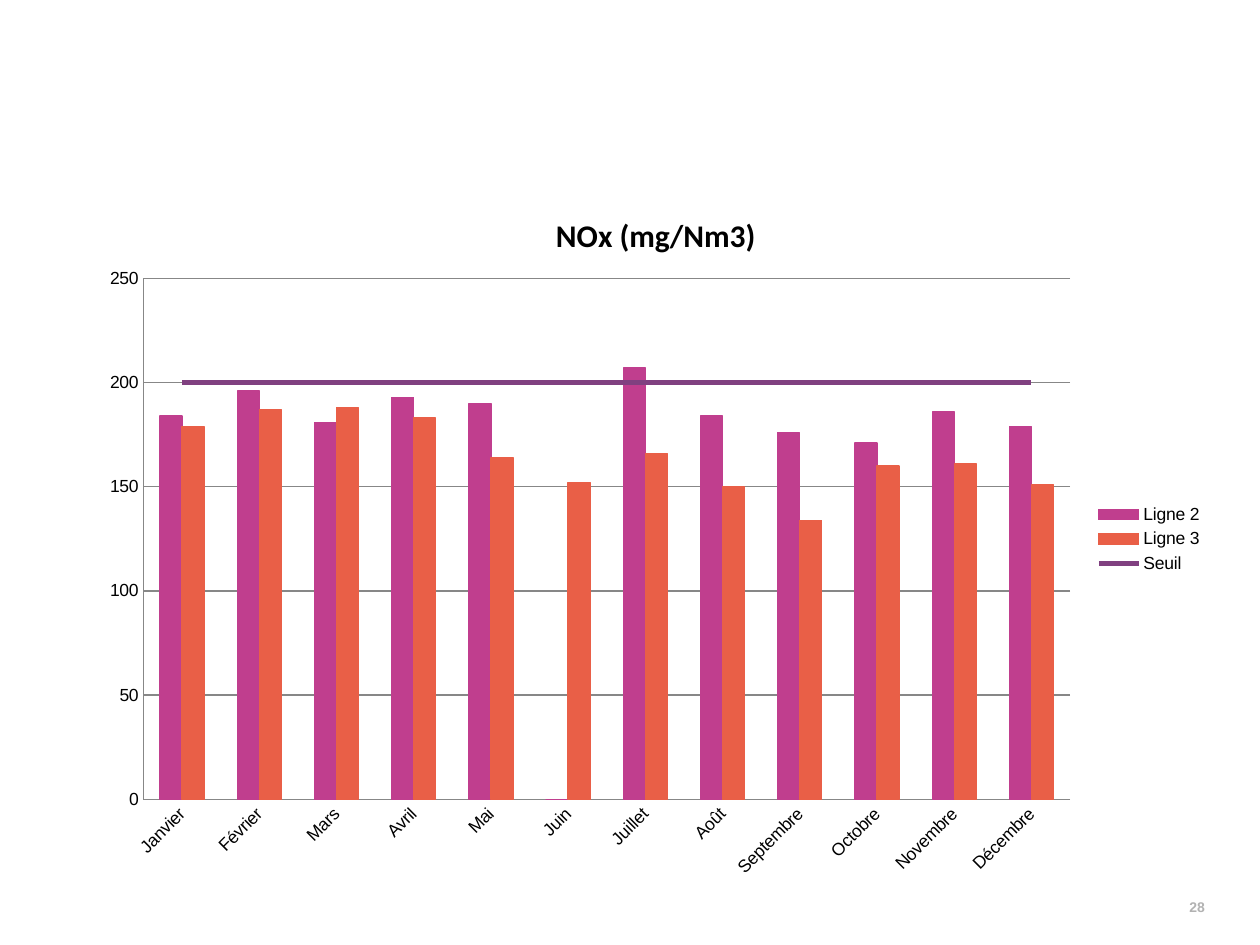
import pptx
import pptx.chart.data
import pptx.dml.color
import pptx.enum.chart
import pptx.enum.text
import pptx.oxml
import pptx.oxml.ns
import pptx.util

Pt = pptx.util.Pt
RGB = pptx.dml.color.RGBColor
Enum = pptx.enum.chart
qn = pptx.oxml.ns.qn

BLACK = RGB(0x00, 0x00, 0x00)
GREY = RGB(0x87, 0x87, 0x87)
PALE = RGB(0xB2, 0xB2, 0xB2)
PINK = RGB(0xC0, 0x3E, 0x8E)
CORAL = RGB(0xE9, 0x5F, 0x47)
PURPLE = RGB(0x80, 0x40, 0x80)

MONTHS = ["Janvier", "Février", "Mars", "Avril", "Mai", "Juin", "Juillet",
          "Août", "Septembre", "Octobre", "Novembre", "Décembre"]
LIMIT = 200
SERIES = {
    "Ligne 2": [184, 196, 181, 193, 190, 0, 207, 184, 176, 171, 186, 179],
    "Ligne 3": [179, 187, 188, 183, 164, 152, 166, 150, 134, 160, 161, 151],
    "Seuil": [LIMIT] * len(MONTHS),
}


def style(item, values):
    for name, value in values.items():
        setattr(item, name, value)


def paint(font, color, **values):
    style(font, values)
    font.color.rgb = color


def stroke(line, color, width):
    line.color.rgb = color
    line.width = Pt(width)


def node(xml):
    space = pptx.oxml.ns.nsdecls("c", "a")
    return pptx.oxml.parse_xml(xml.replace(" NS", " " + space, 1))


def drop(part, tag):
    for old in part.findall(qn(tag)):
        part.remove(old)


def place(part, x, y, w=None, h=None, inner=False):
    """Fix a chart part at fractions of the chart area."""
    drop(part, "c:layout")
    target = '<c:layoutTarget val="inner"/>' if inner else ""
    modes = '<c:xMode val="edge"/><c:yMode val="edge"/>'
    sizes = "".join(f'<c:{key} val="{value}"/>'
                    for key, value in zip("xywh", (x, y, w, h))
                    if value is not None)
    layout = node(f"<c:layout NS><c:manualLayout>{target}{modes}{sizes}"
                  "</c:manualLayout></c:layout>")
    if inner:
        part.insert(0, layout)
    else:
        part.find(qn("c:overlay")).addprevious(layout)


def add_line(chart):
    """Turn the last column series into a line on the same axes."""
    bars = chart.plots[0]._element
    ser = bars.findall(qn("c:ser"))[-1]
    drop(ser, "c:invertIfNegative")
    ids = "".join(f'<c:axId val="{axis.get("val")}"/>'
                  for axis in bars.findall(qn("c:axId")))
    lines = node('<c:lineChart NS><c:grouping val="standard"/>'
                 '<c:varyColors val="0"/><c:marker val="1"/>'
                 f"{ids}</c:lineChart>")
    lines.insert(2, ser)
    bars.addnext(lines)


def set_title(chart):
    frame = chart.chart_title.text_frame
    frame.text = "NOx (mg/Nm3)"
    paint(frame.paragraphs[0].runs[0].font, BLACK,
          name="Calibri", size=Pt(18), bold=True)
    title = chart.chart_title._element
    title.find(qn("c:overlay")).set("val", "1")
    place(title, 0.41, 0.04)


def set_axes(chart):
    for axis in (chart.category_axis, chart.value_axis):
        style(axis, {"major_tick_mark": Enum.XL_TICK_MARK.NONE,
                     "minor_tick_mark": Enum.XL_TICK_MARK.NONE})
        stroke(axis.format.line, GREY, 0.75)
        paint(axis.tick_labels.font, BLACK, name="Arial", size=Pt(10))
    style(chart.value_axis, {"minimum_scale": 0, "maximum_scale": 250,
                             "major_unit": 50, "has_major_gridlines": True})
    stroke(chart.value_axis.major_gridlines.format.line, GREY, 0.75)
    text = chart.category_axis._element.find(qn("c:txPr"))
    text.find(qn("a:bodyPr")).set("rot", str(-45 * 60000))


def set_series(chart):
    bars, lines = chart.plots
    style(bars, {"gap_width": 150, "overlap": 0, "vary_by_categories": False})
    for series, color in zip(bars.series, (PINK, CORAL)):
        series.format.fill.solid()
        series.format.fill.fore_color.rgb = color
        stroke(series.format.line, color, 0.75)
    limit = lines.series[0]
    limit.smooth = True
    limit.marker.style = Enum.XL_MARKER_STYLE.NONE
    stroke(limit.format.line, PURPLE, 3)


def set_legend(chart):
    chart.has_legend = True
    style(chart.legend, {"position": Enum.XL_LEGEND_POSITION.RIGHT,
                         "include_in_layout": False})
    paint(chart.legend.font, BLACK, name="Arial", size=Pt(10))
    place(chart.legend._element, 0.89, 0.45, 0.1, 0.11)


def add_chart(slide):
    data = pptx.chart.data.CategoryChartData()
    data.categories = MONTHS
    for name, values in SERIES.items():
        data.add_series(name, values)
    chart = slide.shapes.add_chart(
        Enum.XL_CHART_TYPE.COLUMN_CLUSTERED,
        Pt(49.7), Pt(102.2), Pt(645.8), Pt(407.5), data).chart
    paint(chart.font, BLACK, name="Arial", size=Pt(10))
    add_line(chart)
    set_title(chart)
    set_axes(chart)
    set_series(chart)
    set_legend(chart)
    area = chart._chartSpace.find(".//" + qn("c:plotArea"))
    place(area, 0.05, 0.14, 0.82, 0.73, inner=True)


def add_number(slide):
    box = slide.shapes.add_textbox(Pt(527.8), Pt(504), Pt(167.8), Pt(28.8))
    frame = box.text_frame
    style(frame, {"word_wrap": True, "text": "28",
                  "vertical_anchor": pptx.enum.text.MSO_ANCHOR.MIDDLE})
    line = frame.paragraphs[0]
    line.alignment = pptx.enum.text.PP_ALIGN.RIGHT
    paint(line.runs[0].font, PALE, name="Arial", size=Pt(8), bold=True)


def main():
    deck = pptx.Presentation()
    style(deck, {"slide_width": Pt(720), "slide_height": Pt(540)})
    slide = deck.slides.add_slide(deck.slide_layouts[6])
    add_number(slide)
    add_chart(slide)
    deck.save("out.pptx")


if __name__ == "__main__":
    main()
